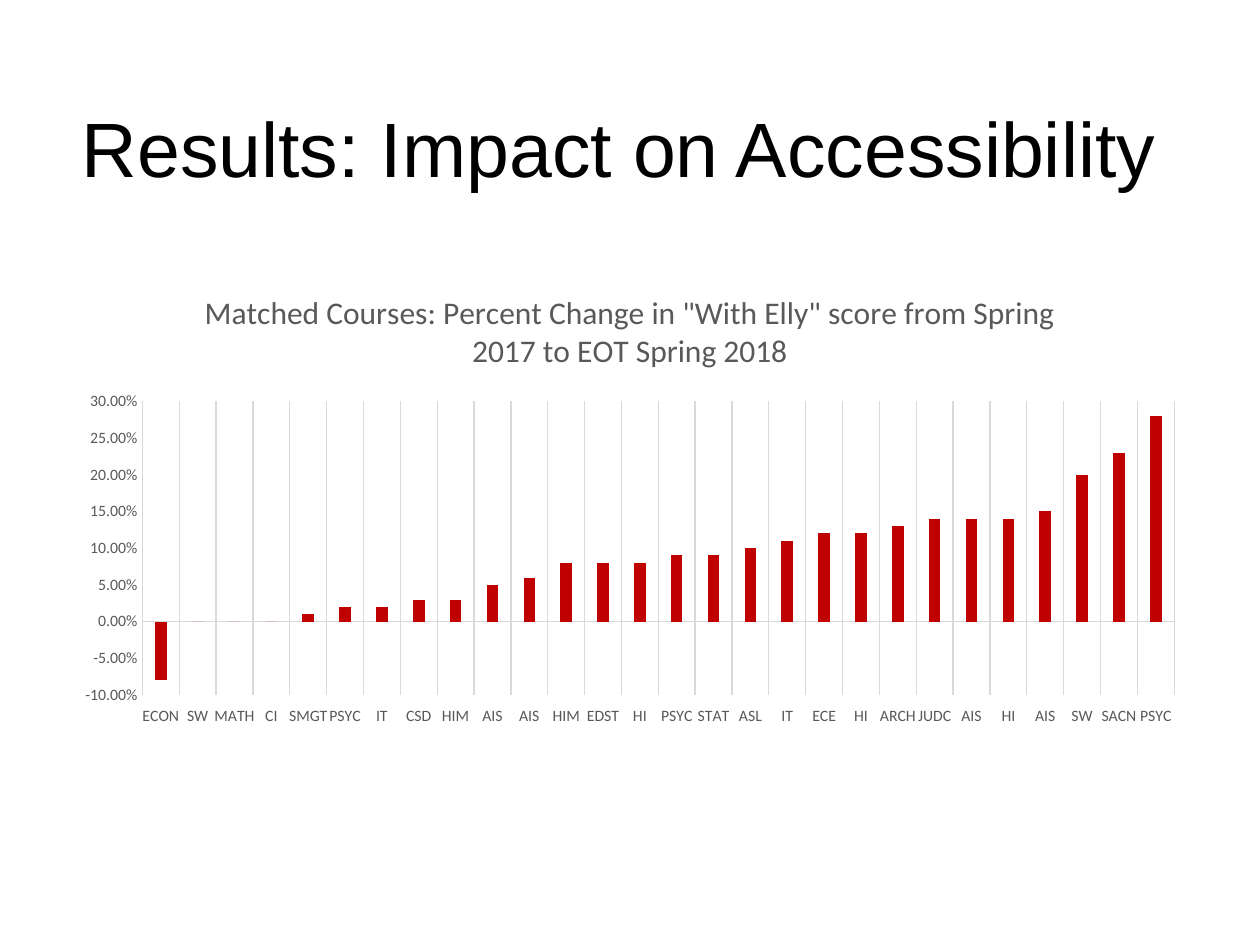
from lxml import etree
from pptx import Presentation
from pptx.chart.data import CategoryChartData
from pptx.dml.color import RGBColor
from pptx.enum.chart import XL_CHART_TYPE, XL_TICK_LABEL_POSITION, XL_TICK_MARK
from pptx.enum.text import MSO_ANCHOR, PP_ALIGN
from pptx.oxml.ns import qn
from pptx.util import Cm, Pt

COLUMN = XL_CHART_TYPE.COLUMN_CLUSTERED
LOW = XL_TICK_LABEL_POSITION.LOW
NO_TICK = XL_TICK_MARK.NONE
MIDDLE = MSO_ANCHOR.MIDDLE
CENTER = PP_ALIGN.CENTER

COLORS = {"ink": "000000", "label": "595959", "grid": "D9D9D9", "bar": "C00000"}
LEFT, WIDTH = Cm(1.27), Cm(22.86)

SCORES = [
    ("ECON", -0.08), ("SW", 0), ("MATH", 0), ("CI", 0),
    ("SMGT", 0.01), ("PSYC", 0.02), ("IT", 0.02), ("CSD", 0.03),
    ("HIM", 0.03), ("AIS", 0.05), ("AIS", 0.06), ("HIM", 0.08),
    ("EDST", 0.08), ("HI", 0.08), ("PSYC", 0.09), ("STAT", 0.09),
    ("ASL", 0.1), ("IT", 0.11), ("ECE", 0.12), ("HI", 0.12),
    ("ARCH", 0.13), ("JUDC", 0.14), ("AIS", 0.14), ("HI", 0.14),
    ("AIS", 0.15), ("SW", 0.2), ("SACN", 0.23), ("PSYC", 0.28),
]


def color(name):
    return RGBColor.from_string(COLORS[name])


def style(font, face, size, tint):
    font.name, font.size, font.bold = face, Pt(size), False
    font.color.rgb = color(tint)


def rule(line):
    line.color.rgb = color("grid")
    line.width = Pt(0.75)


def place(parent, index, **parts):
    """Fix the layout of a chart part, in fractions of the chart."""
    for old in parent.findall(qn("c:layout")):
        parent.remove(old)
    layout = etree.Element(qn("c:layout"))
    manual = etree.SubElement(layout, qn("c:manualLayout"))
    for tag, value in parts.items():
        etree.SubElement(manual, qn(f"c:{tag}")).set("val", str(value))
    parent.insert(index, layout)


def add_head(slide, text):
    box = slide.shapes.add_textbox(LEFT, Cm(1.76), WIDTH, Cm(2.39))
    frame = box.text_frame
    frame.word_wrap = True
    frame.vertical_anchor = MIDDLE
    para = frame.paragraphs[0]
    para.alignment = CENTER
    run = para.add_run()
    run.text = text
    style(run.font, "Arial", 44, "ink")


def add_title(chart, text):
    chart.has_title = True
    title = chart.chart_title
    para = title.text_frame.paragraphs[0]
    para.alignment = CENTER
    run = para.add_run()
    run.text = text
    style(run.font, "Calibri", 18, "label")
    place(title._element, 1, xMode="edge", yMode="edge", x=0.12, y=0.03)


def set_axes(chart):
    for axis in (chart.category_axis, chart.value_axis):
        axis.major_tick_mark = axis.minor_tick_mark = NO_TICK
        style(axis.tick_labels.font, "Calibri", 9, "label")
    cats, vals = chart.category_axis, chart.value_axis
    cats.tick_label_position = LOW
    cats.has_major_gridlines = True
    rule(cats.format.line)
    rule(cats.major_gridlines.format.line)
    vals.has_major_gridlines = False
    vals.format.line.fill.background()
    vals.minimum_scale, vals.maximum_scale, vals.major_unit = -0.1, 0.3, 0.05
    vals.tick_labels.number_format = "0.00%"
    vals.tick_labels.number_format_is_linked = False


def add_bars(slide, title):
    names, values = zip(*SCORES)
    data = CategoryChartData(number_format="0.00%")
    data.categories = names
    data.add_series("Series 1", values)
    frame = slide.shapes.add_chart(COLUMN, LEFT, Cm(5.46), WIDTH, Cm(9.4), data)
    chart = frame.chart
    chart.has_legend = False
    style(chart.font, "Times New Roman", 10, "ink")
    add_title(chart, title)
    set_axes(chart)
    plot = chart.plots[0]
    plot.gap_width, plot.overlap, plot.vary_by_categories = 219, -27, False
    bars = plot.series[0]
    bars.invert_if_negative = False
    bars.format.fill.solid()
    bars.format.fill.fore_color.rgb = color("bar")
    area = chart._chartSpace.find(".//" + qn("c:plotArea"))
    place(area, 0, layoutTarget="inner", xMode="edge", yMode="edge",
          x=0.07, y=0.28, w=0.91, h=0.63)


def main():
    deck = Presentation()
    deck.slide_width, deck.slide_height = Cm(25.4), Cm(19.05)
    slide = deck.slides.add_slide(deck.slide_layouts[6])
    add_head(slide, "Results: Impact on Accessibility ")
    add_bars(slide, 'Matched Courses: Percent Change in "With Elly" score '
                    "from Spring 2017 to EOT Spring 2018")
    deck.save("out.pptx")


if __name__ == "__main__":
    main()
